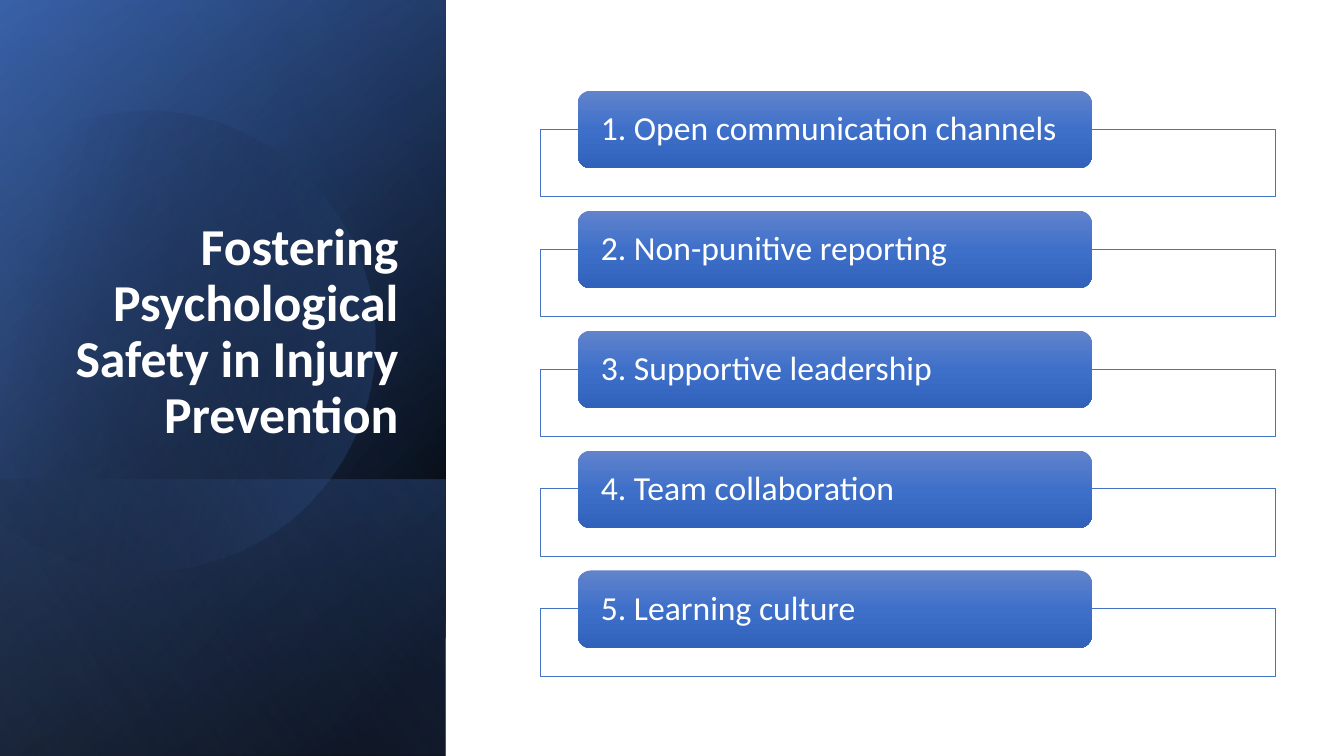
from math import cos, radians, sin
from typing import NamedTuple

from lxml import etree
from pptx import Presentation
from pptx.dml.color import RGBColor
from pptx.enum.shapes import MSO_SHAPE
from pptx.enum.text import MSO_ANCHOR, PP_ALIGN
from pptx.oxml.ns import qn
from pptx.shapes.autoshape import Shape
from pptx.shapes.shapetree import GroupShapes
from pptx.slide import Slide
from pptx.util import Inches, Pt

RECTANGLE = MSO_SHAPE.RECTANGLE
ROUNDED = MSO_SHAPE.ROUNDED_RECTANGLE
MIDDLE = MSO_ANCHOR.MIDDLE
BOTTOM = MSO_ANCHOR.BOTTOM
LEFT = PP_ALIGN.LEFT
RIGHT = PP_ALIGN.RIGHT

BLACK = RGBColor(0x00, 0x00, 0x00)
WHITE = RGBColor(0xFF, 0xFF, 0xFF)
BLUE = RGBColor(0x44, 0x72, 0xC4)
DARK_BLUE = RGBColor(0x2F, 0x55, 0x97)
PALE_BLUE = RGBColor(0x8F, 0xAA, 0xDC)
CARD_TOP = RGBColor(0x61, 0x83, 0xCB)
CARD_MIDDLE = RGBColor(0x3E, 0x70, 0xCA)
CARD_BOTTOM = RGBColor(0x30, 0x62, 0xBB)
FONT = "Calibri"

Point = tuple[float, float]


class Stop(NamedTuple):
    position: int
    color: RGBColor
    opacity: int = 100


class Gradient(NamedTuple):
    angle: int
    stops: tuple[Stop, ...]


class Box(NamedTuple):
    left: float
    top: float
    width: float
    height: float


class Panel(NamedTuple):
    box: Box
    gradient: Gradient


FULL_PANEL = Box(-1.54, 1.54, 7.5, 4.42)
BACK_PANELS = (
    Panel(FULL_PANEL, Gradient(50, (Stop(8, BLACK), Stop(100, DARK_BLUE)))),
    Panel(FULL_PANEL, Gradient(30, (Stop(0, BLACK, 0), Stop(99, BLUE, 46)))),
    Panel(Box(0.84, 3.92, 2.74, 4.42), Gradient(130, (Stop(2, BLUE, 29), Stop(100, BLACK, 30)))),
)
FRONT_PANEL = Panel(FULL_PANEL, Gradient(120, (Stop(0, BLACK, 0), Stop(99, PALE_BLUE, 11))))
CARD_GRADIENT = Gradient(90, (Stop(0, CARD_TOP), Stop(50, CARD_MIDDLE), Stop(100, CARD_BOTTOM)))

# Disc outline: one point starts or draws a line, three points draw a curve
DISC_SEGMENTS: tuple[tuple[Point, ...], ...] = (
    ((1.49, 1.1),),
    ((2.46, 1.12), (3.35, 1.77), (3.63, 2.75)),
    ((3.98, 3.97), (3.28, 5.23), (2.07, 5.58)),
    ((1.31, 5.8), (0.53, 5.61), (-0.03, 5.14)),
    ((-0.15, 5.03),),
    ((-0.15, 1.75),),
    ((0, 1.61),),
    ((0.23, 1.42), (0.5, 1.28), (0.8, 1.19)),
    ((1.03, 1.13), (1.26, 1.1), (1.49, 1.1)),
)
DISC_BOX = Box(-0.55, 1.06, 4.27, 4.57)
DISC_ROTATION = -16.1
DISC_GRADIENT = Gradient(30, (Stop(29, BLACK, 0), Stop(100, BLUE, 43)))

TITLE = "Fostering Psychological Safety in Injury Prevention"
TOPICS = (
    "1. Open communication channels",
    "2. Non-punitive reporting",
    "3. Supportive leadership",
    "4. Team collaboration",
    "5. Learning culture",
)
FIRST_CARD_TOP = 0.9
CARD_PITCH = 1.19
FRAME_OFFSET = 0.38
LABEL_OFFSET = 0.04


def to_lengths(box: Box) -> list[Inches]:
    return [Inches(value) for value in box]


def fill_gradient(shape: Shape, gradient: Gradient) -> None:
    fill = etree.Element(qn("a:gradFill"), rotWithShape="1")
    stop_list = etree.SubElement(fill, qn("a:gsLst"))
    for stop in gradient.stops:
        entry = etree.SubElement(stop_list, qn("a:gs"), pos=str(stop.position * 1000))
        color = etree.SubElement(entry, qn("a:srgbClr"), val=str(stop.color))
        if stop.opacity < 100:
            etree.SubElement(color, qn("a:alpha"), val=str(stop.opacity * 1000))
    etree.SubElement(fill, qn("a:lin"), ang=str(gradient.angle * 60000), scaled="0")
    shape._element.spPr.insert(2, fill)  # after position and geometry
    shape.line.fill.background()
    shape.shadow.inherit = False


def write_text(shape: Shape, text: str, size: int, align: PP_ALIGN, anchor: MSO_ANCHOR) -> None:
    frame = shape.text_frame
    frame.word_wrap = True
    frame.vertical_anchor = anchor
    paragraph = frame.paragraphs[0]
    paragraph.text = text
    paragraph.alignment = align
    paragraph.line_spacing = 0.9
    paragraph.font.name = FONT
    paragraph.font.size = Pt(size)
    paragraph.font.color.rgb = WHITE


def add_panel(slide: Slide, panel: Panel) -> None:
    shape = slide.shapes.add_shape(RECTANGLE, *to_lengths(panel.box))
    shape.rotation = 90
    shape._element.spPr.xfrm.set("flipH", "1")
    fill_gradient(shape, panel.gradient)


def to_disc_point(point: Point) -> Point:
    """Turn a slide point back into the unrotated box of the disc."""
    angle = radians(-DISC_ROTATION)
    half_width, half_height = DISC_BOX.width / 2, DISC_BOX.height / 2
    x = point[0] - DISC_BOX.left - half_width
    y = point[1] - DISC_BOX.top - half_height
    return (half_width + x * cos(angle) - y * sin(angle),
            half_height + x * sin(angle) + y * cos(angle))


def add_disc(slide: Slide) -> None:
    left, top, width, height = to_lengths(DISC_BOX)
    builder = slide.shapes.build_freeform(left, top)
    builder.add_line_segments([(left + width, top), (left + width, top + height)])
    disc = builder.convert_to_shape()
    outline = next(disc._element.iter(qn("a:path")))
    for step in list(outline):
        outline.remove(step)
    for index, segment in enumerate(DISC_SEGMENTS):
        line_tag = "a:lnTo" if index else "a:moveTo"
        step = etree.SubElement(outline, qn("a:cubicBezTo" if len(segment) == 3 else line_tag))
        for point in segment:
            x, y = to_disc_point(point)
            etree.SubElement(step, qn("a:pt"), x=str(int(Inches(x))), y=str(int(Inches(y))))
    etree.SubElement(outline, qn("a:close"))
    disc.rotation = DISC_ROTATION
    fill_gradient(disc, DISC_GRADIENT)


def add_title(slide: Slide) -> None:
    title = slide.shapes.add_textbox(*to_lengths(Box(0.64, 1.84, 3.41, 2.62)))
    write_text(title, TITLE, 37, RIGHT, BOTTOM)
    paragraph = title.text_frame.paragraphs[0]
    paragraph.space_after = Pt(6)
    paragraph.font.bold = True


def add_topic(shapes: GroupShapes, topic: str, top: float) -> None:
    frame = shapes.add_shape(RECTANGLE, *to_lengths(Box(5.36, top + FRAME_OFFSET, 7.29, 0.67)))
    frame.fill.solid()
    frame.fill.fore_color.rgb = WHITE
    frame.line.color.rgb = BLUE
    frame.line.width = Pt(0.5)
    frame.shadow.inherit = False

    card = shapes.add_shape(ROUNDED, *to_lengths(Box(5.73, top, 5.1, 0.77)))
    fill_gradient(card, CARD_GRADIENT)

    label = shapes.add_textbox(*to_lengths(Box(5.77, top + LABEL_OFFSET, 5.03, 0.7)))
    write_text(label, topic, 24, LEFT, MIDDLE)
    label.text_frame.margin_left = label.text_frame.margin_right = Inches(0.19)
    label.text_frame.margin_top = label.text_frame.margin_bottom = 0


def main() -> None:
    presentation = Presentation()
    presentation.slide_width = Inches(13.33)
    presentation.slide_height = Inches(7.5)
    slide = presentation.slides.add_slide(presentation.slide_layouts[6])

    # Left side: layered gradients and title
    for panel in BACK_PANELS:
        add_panel(slide, panel)
    add_disc(slide)
    add_panel(slide, FRONT_PANEL)
    add_title(slide)

    # Right side: topic list
    topic_list = slide.shapes.add_group_shape()
    for index, topic in enumerate(TOPICS):
        add_topic(topic_list.shapes, topic, FIRST_CARD_TOP + index * CARD_PITCH)

    presentation.save("out.pptx")


if __name__ == "__main__":
    main()
